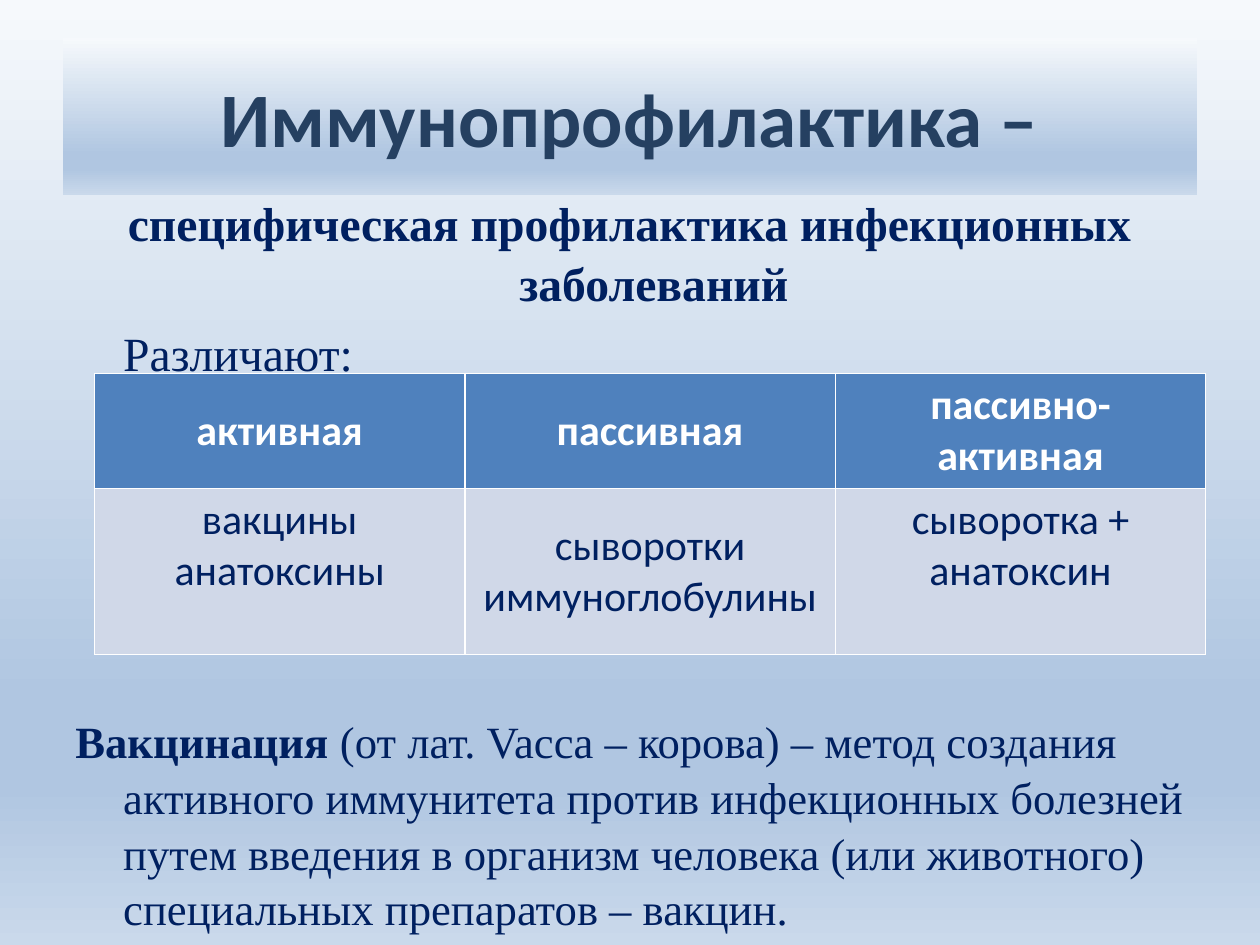
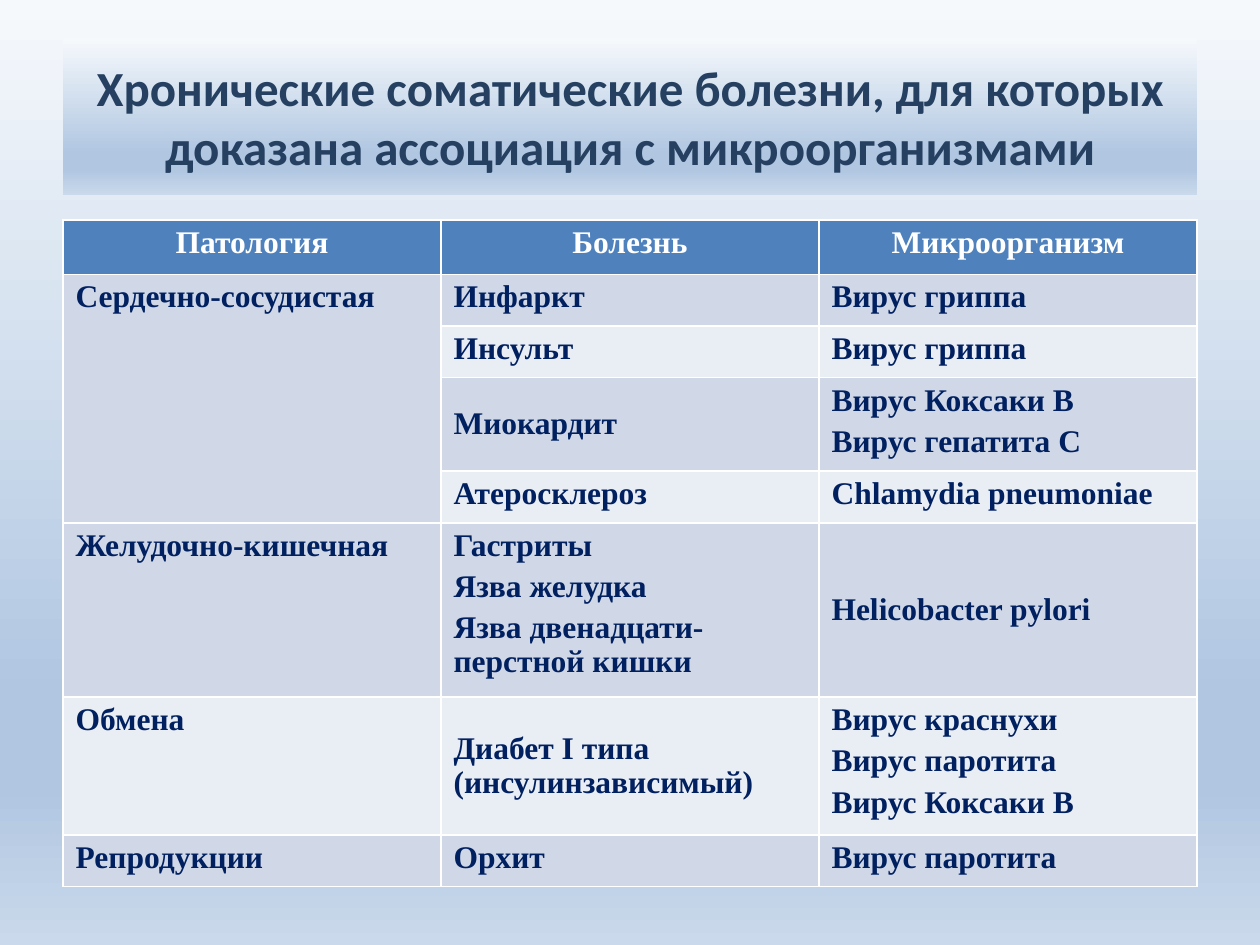
"""Build two slides on immunoprophylaxis and on diseases linked to microorganisms."""
import copy

import pptx
import pptx.dml.color
import pptx.enum.shapes
import pptx.enum.text
import pptx.oxml.ns
import pptx.util

rgb = pptx.dml.color.RGBColor.from_string
Pt = pptx.util.Pt
Inches = pptx.util.Inches
CENTER = pptx.enum.text.PP_ALIGN.CENTER
LEFT = pptx.enum.text.PP_ALIGN.LEFT
MIDDLE = pptx.enum.text.MSO_ANCHOR.MIDDLE
TOP = pptx.enum.text.MSO_ANCHOR.TOP

SANS, SERIF = "Calibri", "Times New Roman"
TITLE_INK, INK, WHITE = "254061", "002060", "FFFFFF"
HEADER_FILL, BANDS = "4F81BD", ("D0D8E8", "E9EDF4")
SKY = ((0, "F6F9FC"), (0.74, "B0C6E1"), (0.83, "B0C6E1"), (1, "CAD9EB"))

deck = pptx.Presentation()
deck.slide_width, deck.slide_height = Inches(10), Inches(7.5)
column, row_unit = deck.slide_width // 20, deck.slide_height // 100
hanging = Inches(0.38)


def paint_sky(fill, owner):
    fill.gradient()
    fill.gradient_angle = 270
    stop_list = owner.find(".//" + pptx.oxml.ns.qn("a:gsLst"))
    for _ in range(len(SKY) - len(stop_list)):
        stop_list.append(copy.deepcopy(stop_list[0]))
    for stop, (position, color) in zip(fill.gradient_stops, SKY):
        stop.position = position
        stop.color.rgb = rgb(color)


def style(frame, font, size, color, bold, align, before=0, spacing=1.0):
    frame.word_wrap = True
    for index, paragraph in enumerate(frame.paragraphs):
        paragraph.alignment = align
        paragraph.line_spacing = spacing
        paragraph.space_before = Pt(before if index else 0)
        for run in paragraph.runs:
            run.font.name, run.font.size, run.font.bold = font, Pt(size), bold
            run.font.color.rgb = rgb(color)


prophylaxis_rows = [
    ("активная", "пассивная", "пассивно-активная"),
    ("вакцины анатоксины", "сыворотки иммуноглобулины", "сыворотка + анатоксин"),
]
disease_rows = [
    ("Патология", "Болезнь", "Микроорганизм"),
    ("Сердечно-сосудистая", "Инфаркт", "Вирус гриппа"),
    ("", "Инсульт", "Вирус гриппа"),
    ("", "Миокардит", "Вирус Коксаки В\nВирус гепатита С"),
    ("", "Атеросклероз", "Chlamydia pneumoniae"),
    ("Желудочно-кишечная", "Гастриты\nЯзва желудка\nЯзва двенадцати-перстной кишки",
     "Helicobacter pylori"),
    ("Обмена", "Диабет I типа (инсулинзависимый)",
     "Вирус краснухи\nВирус паротита\nВирус Коксаки В"),
    ("Репродукции", "Орхит", "Вирус паротита"),
]
topics = [
    dict(title="Иммунопрофилактика –", title_size=44, rows=prophylaxis_rows,
         left=1.5, top=39.5, column_width=2.94, heights=(0.91, 1.32),
         font=SANS, size=24, bold=False, align=CENTER, before=0, spacing=1.0,
         middle={(0, 0), (0, 1), (0, 2), (1, 1)}),
    dict(title="Хронические соматические болезни, для которых доказана ассоциация "
               "с микроорганизмами", title_size=28, rows=disease_rows,
         left=1, top=23.3, column_width=3,
         heights=(0.43, 0.41, 0.41, 0.71, 0.41, 1.33, 1.06, 0.41),
         font=SERIF, size=18, bold=True, align=LEFT, before=4.3, spacing=0.97,
         middle={(3, 1), (5, 2), (6, 1)}),
]

tables = []
for topic in topics:
    slide = deck.slides.add_slide(deck.slide_layouts[6])
    paint_sky(slide.background.fill, slide.element)

    heading = slide.shapes.add_shape(
        pptx.enum.shapes.MSO_SHAPE.RECTANGLE,
        column, 4 * row_unit, 18 * column, deck.slide_height // 6)
    heading.shadow.inherit = False
    heading.line.fill.background()
    paint_sky(heading.fill, heading.element)
    heading.text_frame.text = topic["title"]
    heading.text_frame.vertical_anchor = MIDDLE
    style(heading.text_frame, SANS, topic["title_size"], TITLE_INK, True, CENTER)

    rows, column_width = topic["rows"], Inches(topic["column_width"])
    table = slide.shapes.add_table(
        len(rows), 3, int(topic["left"] * column), int(topic["top"] * row_unit),
        3 * column_width, Inches(sum(topic["heights"]))).table
    tables.append(table)
    for table_column in table.columns:
        table_column.width = column_width
    for r, (words, height) in enumerate(zip(rows, topic["heights"])):
        table.rows[r].height = Inches(height)
        header = r == 0
        for c, text in enumerate(words):
            cell = table.cell(r, c)
            cell.fill.solid()
            cell.fill.fore_color.rgb = rgb(HEADER_FILL if header else BANDS[(r - 1) % 2])
            cell.vertical_anchor = MIDDLE if (r, c) in topic["middle"] else TOP
            cell.text_frame.text = text
            style(cell.text_frame, topic["font"], topic["size"],
                  WHITE if header else INK, header or topic["bold"],
                  CENTER if header else topic["align"], topic["before"], topic["spacing"])

tables[1].cell(1, 0).merge(tables[1].cell(4, 0))

prophylaxis = deck.slides[0]
intro = prophylaxis.shapes.add_textbox(
    column, int(19.6 * row_unit), 18 * column, 19 * row_unit).text_frame
intro.text = "специфическая профилактика инфекционных заболеваний\nРазличают:"
style(intro, SERIF, 27.2, INK, True, CENTER, 5.4, 1.05)
kinds = intro.paragraphs[1]
kinds.alignment = LEFT
kinds.runs[0].font.bold = False

definition = prophylaxis.shapes.add_textbox(
    column, int(74.7 * row_unit), 18 * column, 24 * row_unit).text_frame
definition.text = "Вакцинация "
definition.paragraphs[0].add_run().text = (
    "(от лат. Vacca – корова) – метод создания активного иммунитета против "
    "инфекционных болезней путем введения в организм человека (или животного) "
    "специальных препаратов – вакцин.")
style(definition, SERIF, 25.5, INK, False, LEFT, spacing=1.04)
definition.paragraphs[0].runs[0].font.bold = True

for paragraph, first_indent in ((intro.paragraphs[0], -hanging), (kinds, 0),
                                (definition.paragraphs[0], -hanging)):
    properties = paragraph._p.get_or_add_pPr()
    properties.set("marL", str(hanging))
    properties.set("indent", str(first_indent))

deck.save("out.pptx")
